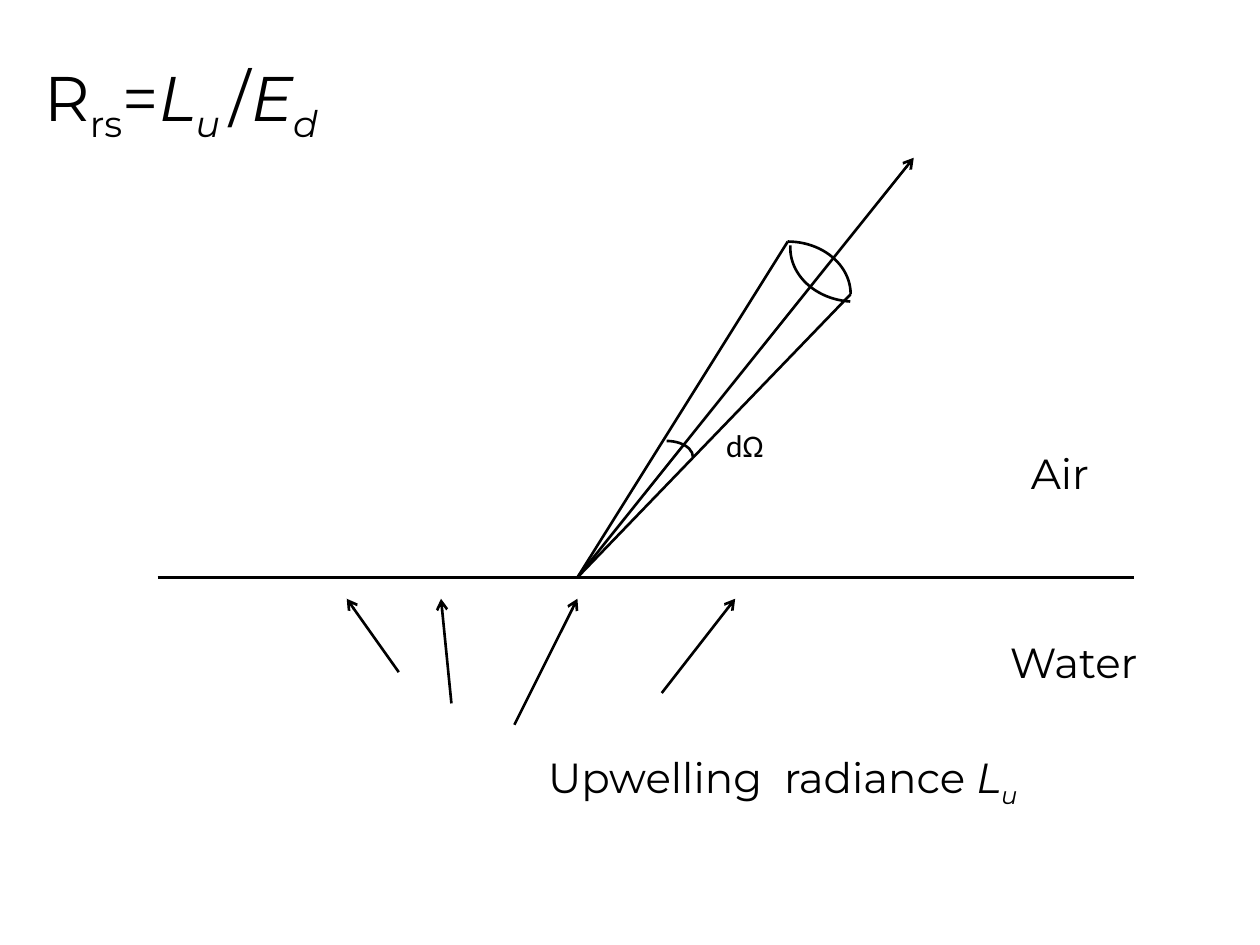
from typing import NamedTuple

from lxml.etree import SubElement
from pptx import Presentation
from pptx.dml.color import RGBColor
from pptx.enum.shapes import MSO_CONNECTOR as Connector, MSO_SHAPE as Preset
from pptx.enum.text import MSO_ANCHOR as Anchor, MSO_AUTO_SIZE as AutoSize, PP_ALIGN as Align
from pptx.oxml.ns import qn
from pptx.util import Cm, Pt

COLORS = {"ink": "000000", "paper": "FFFFFF"}


class Point(NamedTuple):
    x: float
    y: float


class Box(NamedTuple):
    left: float
    top: float
    width: float
    height: float


class Ray(NamedTuple):
    start: Point
    end: Point
    arrow: bool = True


class Arc(NamedTuple):
    box: Box
    rotation: float = 0


class Symbol(NamedTuple):
    text: str
    italic: bool = False
    subscript: bool = False


class Label(NamedTuple):
    box: Box
    symbols: list[Symbol]
    size: int = 24
    font: str = "Montserrat"
    wrap: bool = False


SURFACE_Y = 11.64
ARROW_Y = 12.07  # upwelling arrows all stop just below the surface
APEX = Point(11.64, SURFACE_Y)

RAYS = [
    # Cone sides and viewing direction
    Ray(APEX, Point(15.88, 4.87), arrow=False),
    Ray(APEX, Point(17.15, 5.93), arrow=False),
    Ray(APEX, Point(18.42, 3.18)),
    # Water surface
    Ray(Point(3.18, SURFACE_Y), Point(22.86, SURFACE_Y), arrow=False),
    # Upwelling radiance
    Ray(Point(8.04, 13.55), Point(6.99, ARROW_Y)),
    Ray(Point(9.10, 14.18), Point(8.89, ARROW_Y)),
    Ray(Point(10.37, 14.61), Point(11.64, ARROW_Y)),
    Ray(Point(13.34, 13.97), Point(14.82, ARROW_Y)),
]

ARCS = [
    # Cone mouth: far and near rim
    Arc(Box(14.61, 4.87, 2.54, 2.12)),
    Arc(Box(15.93, 3.96, 2.54, 2.12), rotation=183.3),
    # Solid angle
    Arc(Box(12.91, 8.89, 1.06, 0.64)),
]

FORMULA = Label(
    Box(0.64, 1.06, 6.91, 1.8),
    [
        Symbol("R"), Symbol("rs", subscript=True), Symbol("="),
        Symbol("L", italic=True), Symbol("u ", italic=True, subscript=True), Symbol("/"),
        Symbol("E", italic=True), Symbol("d", italic=True, subscript=True),
    ],
    size=36,
)

LABELS = [
    Label(
        Box(10.8, 15.03, 12.27, 1.27),
        [Symbol("Upwelling  radiance "), Symbol("L", italic=True),
         Symbol("u", italic=True, subscript=True)],
        wrap=True,
    ),
    Label(Box(14.39, 8.47, 1.35, 1.02), [Symbol("dΩ")], size=18, font="Calibri"),
    Label(Box(20.11, 12.7, 3.23, 1.27), [Symbol("Water")]),
    Label(Box(20.53, 8.89, 1.83, 1.27), [Symbol("Air")]),
]


def color(name: str) -> RGBColor:
    return RGBColor.from_string(COLORS[name])


def style_line(line) -> None:
    line.color.rgb = color("ink")
    line.width = Pt(1.5)


def draw_ray(slide, ray: Ray) -> None:
    connector = slide.shapes.add_connector(
        Connector.STRAIGHT, *(Cm(value) for value in (*ray.start, *ray.end))
    )
    style_line(connector.line)
    properties = connector._element.spPr
    if ray.arrow:
        SubElement(properties.find(qn("a:ln")), qn("a:tailEnd"), type="arrow")
    SubElement(properties, qn("a:effectLst"))


def draw_arc(slide, arc: Arc) -> None:
    curve = slide.shapes.add_shape(Preset.ARC, *(Cm(value) for value in arc.box))
    curve.rotation = arc.rotation
    curve.shadow.inherit = False
    curve.fill.background()
    style_line(curve.line)


def write_label(shape, label: Label) -> None:
    shape.left, shape.top, shape.width, shape.height = (Cm(value) for value in label.box)
    frame = shape.text_frame
    frame.auto_size = AutoSize.SHAPE_TO_FIT_TEXT
    frame.word_wrap = label.wrap
    frame.vertical_anchor = Anchor.TOP
    paragraph = frame.paragraphs[0]
    paragraph.alignment = Align.LEFT
    paragraph.line_spacing = 1.0
    paragraph.space_before = Pt(0)
    paragraph.font.name = label.font
    paragraph.font.size = Pt(label.size)
    paragraph.font.color.rgb = color("ink")
    for symbol in label.symbols:
        run = paragraph.add_run()
        run.text = symbol.text
        if symbol.italic:
            run.font.italic = True
        if symbol.subscript:
            run._r.get_or_add_rPr().set("baseline", "-25000")


def main() -> None:
    presentation = Presentation()
    presentation.slide_width, presentation.slide_height = Cm(25.4), Cm(19.05)
    slide = presentation.slides.add_slide(presentation.slide_layouts.get_by_name("Title Only"))
    slide.background.fill.solid()
    slide.background.fill.fore_color.rgb = color("paper")

    # Diagram
    for ray in RAYS:
        draw_ray(slide, ray)
    for arc in ARCS:
        draw_arc(slide, arc)

    # Formula and labels
    write_label(slide.shapes.title, FORMULA)
    for label in LABELS:
        write_label(slide.shapes.add_textbox(0, 0, 0, 0), label)

    presentation.save("out.pptx")


if __name__ == "__main__":
    main()
